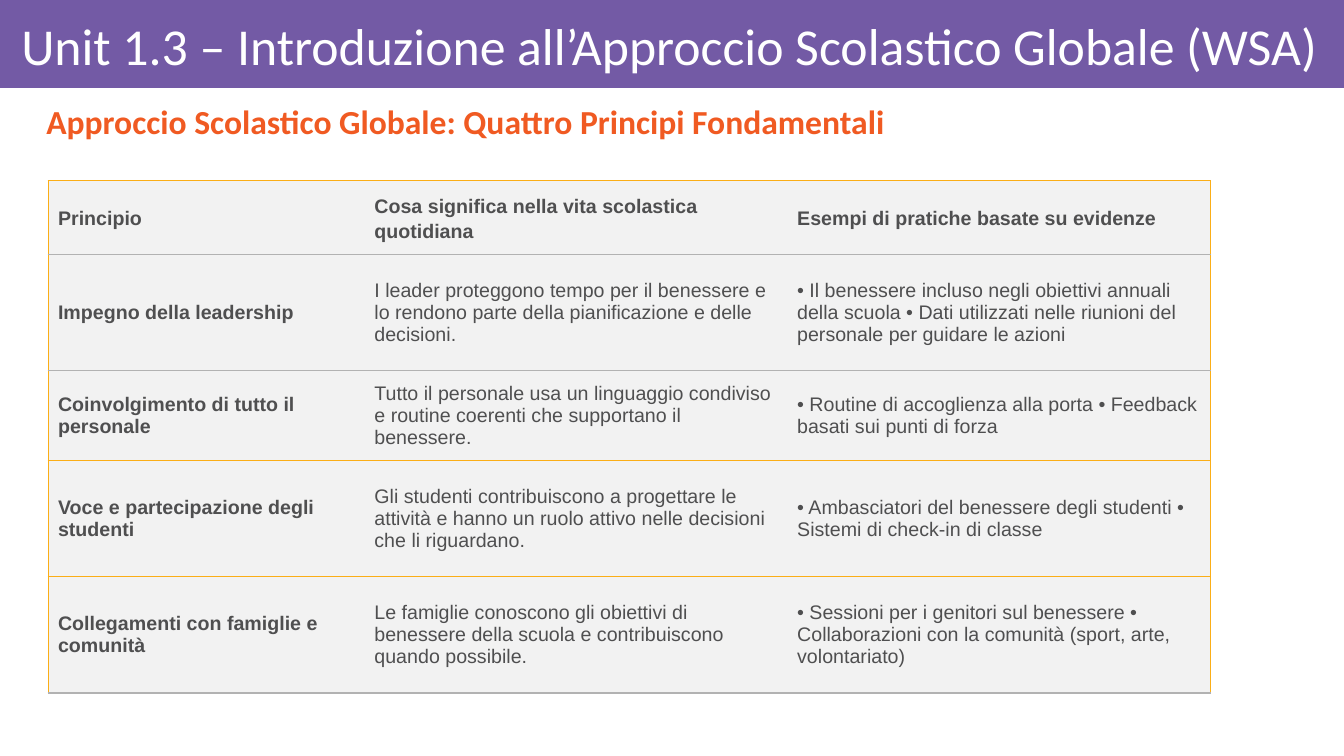
from lxml.etree import SubElement
from pptx import Presentation
from pptx.dml.color import RGBColor
from pptx.enum.shapes import MSO_SHAPE
from pptx.enum.text import MSO_ANCHOR, MSO_AUTO_SIZE, PP_ALIGN
from pptx.oxml.ns import qn
from pptx.util import Pt

# Content
TITLE = "Unit 1.3 – Introduzione all’Approccio Scolastico Globale (WSA)"
SUBTITLE = "Approccio Scolastico Globale: Quattro Principi Fondamentali"
ROWS = [
    ("Principio",
     "Cosa significa nella vita scolastica quotidiana",
     "Esempi di pratiche basate su evidenze"),
    ("Impegno della leadership",
     "I leader proteggono tempo per il benessere e lo rendono parte della "
     "pianificazione e delle decisioni.",
     "• Il benessere incluso negli obiettivi annuali della scuola "
     "• Dati utilizzati nelle riunioni del personale per guidare le azioni"),
    ("Coinvolgimento di tutto il personale",
     "Tutto il personale usa un linguaggio condiviso e routine coerenti "
     "che supportano il benessere.",
     "• Routine di accoglienza alla porta • Feedback basati sui punti di forza"),
    ("Voce e partecipazione degli studenti",
     "Gli studenti contribuiscono a progettare le attività e hanno un ruolo "
     "attivo nelle decisioni che li riguardano.",
     "• Ambasciatori del benessere degli studenti • Sistemi di check-in di classe"),
    ("Collegamenti con famiglie e comunità",
     "Le famiglie conoscono gli obiettivi di benessere della scuola e "
     "contribuiscono quando possibile.",
     "• Sessioni per i genitori sul benessere • Collaborazioni con la comunità "
     "(sport, arte, volontariato)"),
]

# Colours and measures, in points
PURPLE = RGBColor(0x73, 0x5A, 0xA5)
ORANGE = RGBColor(0xF0, 0x5A, 0x22)
AMBER = RGBColor(0xFB, 0xAE, 0x17)
SILVER = RGBColor(0xB2, 0xB2, 0xB2)
PALE = RGBColor(0xF2, 0xF2, 0xF2)
INK = RGBColor(0x4F, 0x4F, 0x50)
WHITE = RGBColor(0xFF, 0xFF, 0xFF)
WIDTH, HEIGHT, BAND_HEIGHT = 960, 540, 62.8
TABLE_LEFT, TABLE_TOP = 34.5, 129
COLUMN_WIDTHS = [226, 302, 302]
ROW_HEIGHTS = [50, 83, 62.3, 83, 83]
RULES = [AMBER, SILVER, SILVER, AMBER, AMBER, SILVER]  # top to bottom


def apply(target, values):
    for name, value in values.items():
        setattr(target, name, value)


def write(frame, text, font, color, para_format):
    para = frame.paragraphs[0]
    apply(para, para_format)
    span = para.add_run()
    span.text = text
    apply(span.font, font)
    span.font.color.rgb = color
    return para


def add_border(cell, side, color):
    properties = cell._tc.get_or_add_tcPr()
    line = SubElement(properties, qn(f"a:ln{side}"), w=str(Pt(1)))
    if color is None:
        SubElement(line, qn("a:noFill"))
    else:
        fill = SubElement(line, qn("a:solidFill"))
        SubElement(fill, qn("a:srgbClr"), val=str(color))


deck = Presentation()
apply(deck, {"slide_width": Pt(WIDTH), "slide_height": Pt(HEIGHT)})
page = deck.slides.add_slide(deck.slide_layouts[5])

# Title on its band
title = page.shapes.title
band = page.shapes.add_shape(MSO_SHAPE.RECTANGLE, 0, 0, Pt(WIDTH), Pt(BAND_HEIGHT))
band.shadow.inherit = False
band.fill.solid()
band.fill.fore_color.rgb = PURPLE
band.line.fill.background()
title._element.addprevious(band._element)
apply(title, {"left": Pt(8), "top": Pt(6.5), "width": Pt(940), "height": Pt(56)})
apply(title.text_frame, {
    "word_wrap": True, "auto_size": MSO_AUTO_SIZE.NONE,
    "vertical_anchor": MSO_ANCHOR.MIDDLE, "margin_left": Pt(7.2),
    "margin_right": Pt(4.3), "margin_top": Pt(4.3), "margin_bottom": Pt(4.3)})
write(title.text_frame, TITLE, {"name": "Calibri", "size": Pt(37)}, WHITE,
      {"alignment": PP_ALIGN.LEFT, "line_spacing": 0.9})

# Subtitle
box = page.shapes.add_textbox(Pt(8), Pt(67), Pt(940), Pt(43))
apply(box.text_frame, {"word_wrap": True, "vertical_anchor": MSO_ANCHOR.MIDDLE})
para = write(box.text_frame, SUBTITLE,
             {"name": "Calibri", "size": Pt(24), "bold": True}, ORANGE,
             {"alignment": PP_ALIGN.JUSTIFY, "line_spacing": 0.9,
              "space_before": Pt(10)})
indents = para._p.get_or_add_pPr()
indents.set("marL", str(Pt(36)))
indents.set("indent", str(Pt(-18)))

# Table of principles
table = page.shapes.add_table(
    len(ROWS), len(COLUMN_WIDTHS), Pt(TABLE_LEFT), Pt(TABLE_TOP),
    Pt(sum(COLUMN_WIDTHS)), Pt(sum(ROW_HEIGHTS))).table
for column, width in zip(table.columns, COLUMN_WIDTHS):
    column.width = Pt(width)
for row, height in zip(table.rows, ROW_HEIGHTS):
    row.height = Pt(height)

last_column = len(COLUMN_WIDTHS) - 1
for r, texts in enumerate(ROWS):
    for c, text in enumerate(texts):
        cell = table.cell(r, c)
        apply(cell, {"vertical_anchor": MSO_ANCHOR.MIDDLE,
                     "margin_left": Pt(7), "margin_right": Pt(7),
                     "margin_top": Pt(7), "margin_bottom": Pt(7)})
        write(cell.text_frame, text,
              {"name": "Arial", "size": Pt(14), "bold": r == 0 or c == 0}, INK,
              {"line_spacing": 1.15 if r == 0 else 1.0})
        add_border(cell, "L", AMBER if c == 0 else None)
        add_border(cell, "R", AMBER if c == last_column else None)
        add_border(cell, "T", RULES[r])
        add_border(cell, "B", RULES[r + 1])
        cell.fill.solid()
        cell.fill.fore_color.rgb = PALE

deck.save("out.pptx")
